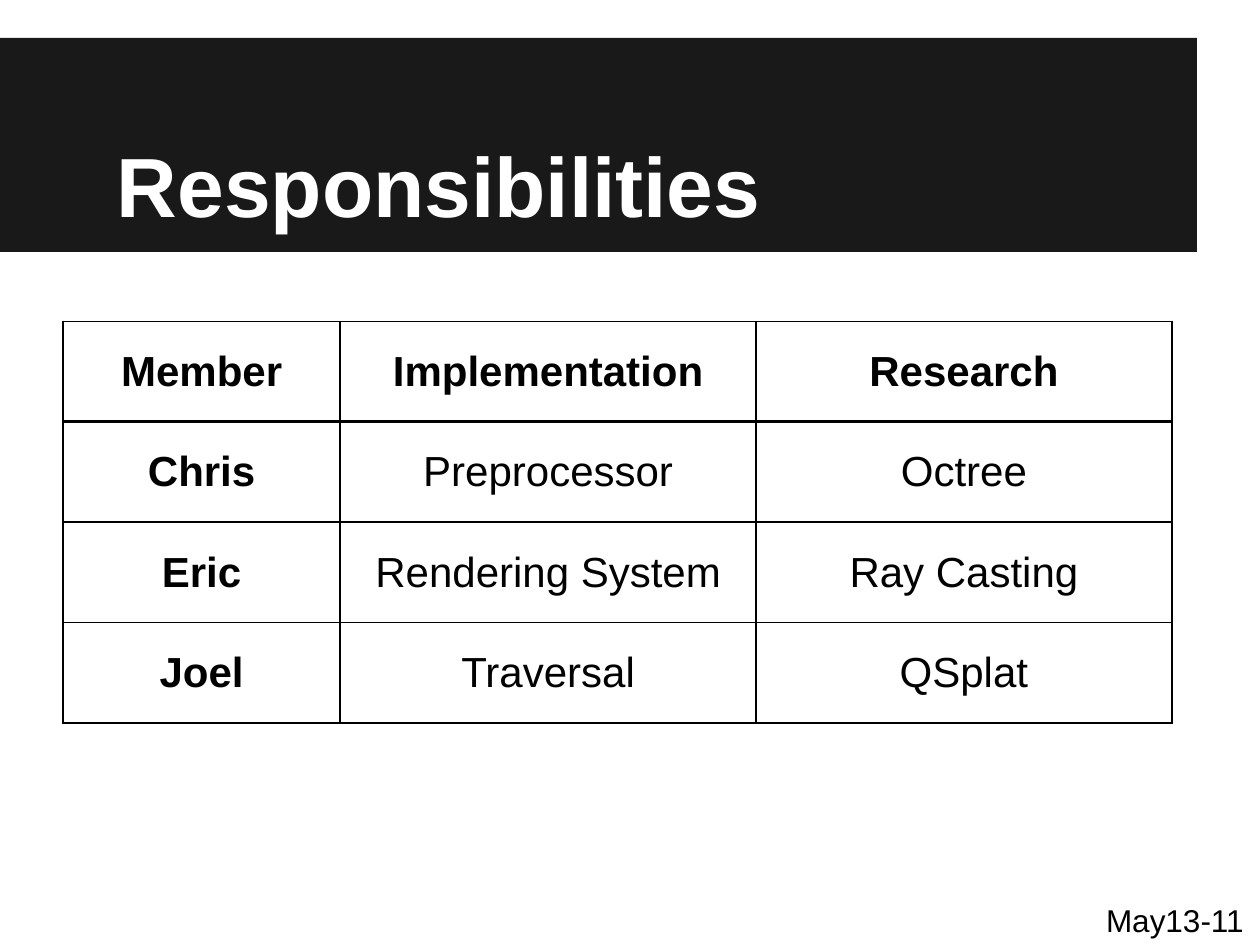
import pptx
import pptx.util
import pptx.dml.color
import pptx.enum.shapes
import pptx.enum.text
from lxml import etree

Inches = pptx.util.Inches
Pt = pptx.util.Pt
ANCHOR = pptx.enum.text.MSO_ANCHOR
ALIGN = pptx.enum.text.PP_ALIGN
HUES = {"band": "191919", "paper": "FFFFFF", "ink": "000000"}
ROWS = [
    ("Member", "Implementation", "Research"),
    ("Chris", "Preprocessor", "Octree"),
    ("Eric", "Rendering System", "Ray Casting"),
    ("Joel", "Traversal", "QSplat"),
]
WIDTHS = (2.2, 3.3, 3.3)


def color(name):
    """Return the named colour."""
    return pptx.dml.color.RGBColor.from_string(HUES[name])


def style(para, size, hue, bold=False):
    """Set the font of a paragraph."""
    font = para.font
    font.name, font.size, font.bold = "Arial", Pt(size), bold
    font.color.rgb = color(hue)


def pad(item, gap):
    """Give a cell or text frame equal margins."""
    item.margin_left = item.margin_right = gap
    item.margin_top = item.margin_bottom = gap


def border(cell, bottom):
    """Draw the four borders of a cell, with the given bottom width."""
    props = cell._tc.get_or_add_tcPr()
    sides = {"lnL": 1, "lnR": 1, "lnT": 1, "lnB": bottom}
    for spot, (side, width) in enumerate(sides.items()):
        line = etree.Element(pptx.oxml.ns.qn("a:" + side), w=str(Pt(width)))
        fill = etree.SubElement(line, pptx.oxml.ns.qn("a:solidFill"))
        etree.SubElement(fill, pptx.oxml.ns.qn("a:srgbClr"), val=HUES["ink"])
        props.insert(spot, line)


def header(slide, left, top, width, height):
    """Place the dark band and its title."""
    band = slide.shapes.add_shape(
        pptx.enum.shapes.MSO_SHAPE.RECTANGLE, left, top, width, height)
    band.shadow.inherit = False
    band.fill.solid()
    band.fill.fore_color.rgb = color("band")
    band.line.fill.background()
    box = slide.shapes.add_textbox(
        left + Inches(0.5), top, width - Inches(0.5), height - Inches(0.04))
    frame = box.text_frame
    frame.word_wrap = True
    frame.vertical_anchor = ANCHOR.BOTTOM
    pad(frame, Inches(0.1))
    para = frame.paragraphs[0]
    para.text = "Responsibilities"
    para._p.get_or_add_pPr().set("indent", str(Inches(0.33)))
    style(para, 48, "paper", True)


def roster(slide, left, top, width, height):
    """Place the table of members and their work."""
    table = slide.shapes.add_table(
        len(ROWS), len(WIDTHS), left, top, width, height).table
    table.horz_banding = False
    for col, share in zip(table.columns, WIDTHS):
        col.width = Inches(share)
    for r, row in enumerate(ROWS):
        for c, text in enumerate(row):
            cell = table.cell(r, c)
            cell.fill.background()
            cell.vertical_anchor = ANCHOR.MIDDLE
            pad(cell, Inches(0.1))
            para = cell.text_frame.paragraphs[0]
            para.text = text
            para.alignment = ALIGN.CENTER
            style(para, 24, "ink", r == 0 or c == 0)
            border(cell, 2 if r == 0 else 1)


def footer(slide, left, top, width, height):
    """Place the team label."""
    frame = slide.shapes.add_textbox(left, top, width, height).text_frame
    frame.word_wrap = True
    para = frame.paragraphs[0]
    para.text = "May13-11"
    style(para, 18, "ink")


def main():
    """Build and save the slide."""
    deck = pptx.Presentation()
    deck.slide_width, deck.slide_height = Inches(10), Inches(7.5)
    slide = deck.slides.add_slide(deck.slide_layouts[6])
    slide.background.fill.solid()
    slide.background.fill.fore_color.rgb = color("paper")
    header(slide, Inches(0), Inches(0.3), Inches(9.5), Inches(1.7))
    roster(slide, Inches(0.5), Inches(2.55), Inches(8.8), Inches(3.19))
    footer(slide, Inches(8.68), Inches(7.1), Inches(1.32), Inches(0.4))
    deck.save("out.pptx")


if __name__ == "__main__":
    main()
